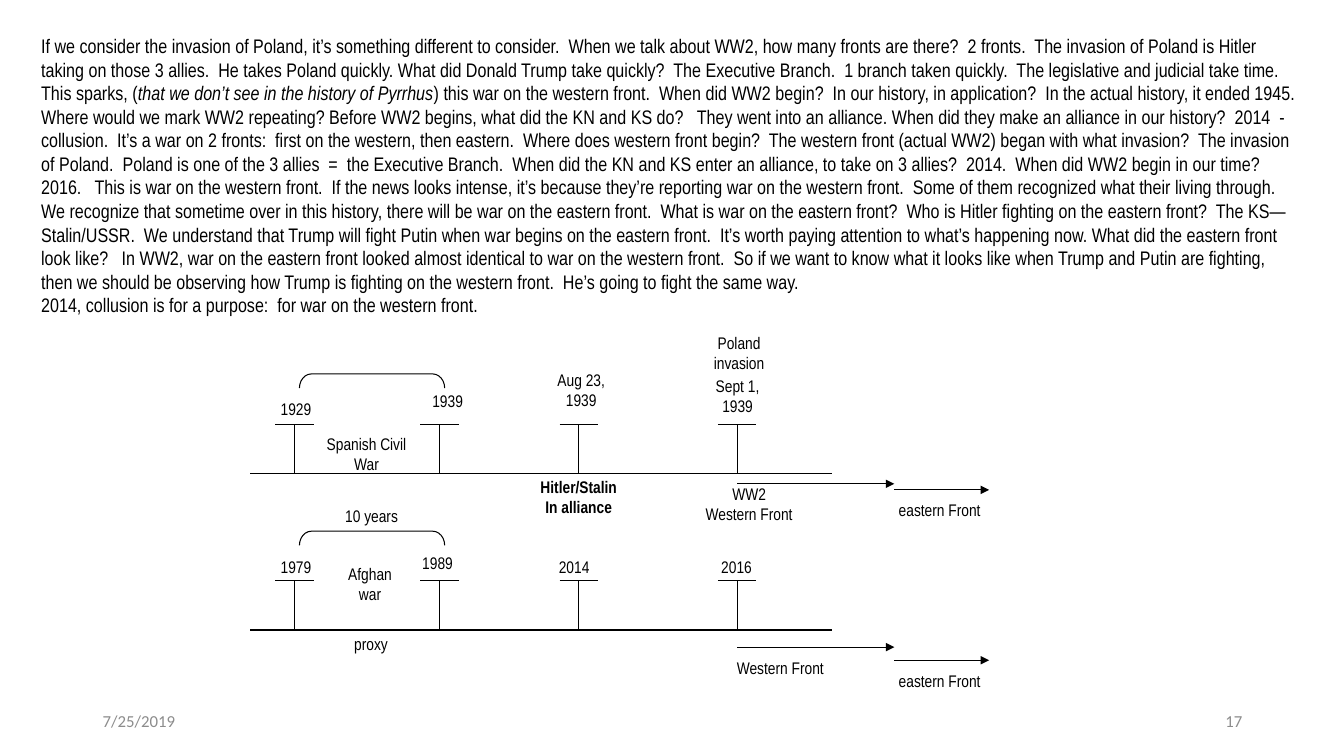
"""Build the slide comparing the 1929-1939 and 1979-2016 war timelines."""
from lxml import etree
from pptx import Presentation
from pptx.dml.color import RGBColor
from pptx.enum.shapes import MSO_CONNECTOR as Connector, MSO_SHAPE as Shape
from pptx.enum.text import MSO_ANCHOR as Anchor, PP_ALIGN as Align
from pptx.oxml.ns import qn
from pptx.util import Emu, Pt

PX = 9144
BLACK, GREY = "000000", "8C8C8C"
NARROW = "Arial Narrow"

BODY = [
    [
        ("If we consider the invasion of Poland, it’s something different to consider.  "
         "When we talk about WW2, how many fronts are there?  2 fronts.  "
         "The invasion of Poland is Hitler taking on those 3 allies.  He takes Poland quickly. "
         "What did Donald Trump take quickly?  The Executive Branch.  1 branch taken quickly.  "
         "The legislative and judicial take time.  This sparks, (", False),
        ("that we don’t see in the history of Pyrrhus", True),
        (") this war on the western front.  When did WW2 begin?  In our history, in application?  "
         "In the actual history, it ended 1945. Where would we mark WW2 repeating? "
         "Before WW2 begins, what did the KN and KS do?   They went into an alliance. "
         "When did they make an alliance in our history?  2014  -  collusion.  "
         "It’s a war on 2 fronts:  first on the western, then eastern.  ", False),
        ("Where does western front begin?  "
         "The western front (actual WW2) began with what invasion?  The invasion of Poland.  "
         "Poland is one of the 3 allies  =  the Executive Branch.  "
         "When did the KN and KS enter an alliance, to take on 3 allies?  2014.  "
         "When did WW2 begin in our time?  2016.   This is war on the western front.  "
         "If the news looks intense, it’s because they’re reporting war on the western front.  "
         "Some of them recognized what their living through.  ", False),
        ("We recognize that sometime over in this history, there will be war on the eastern front.  "
         "What is war on the eastern front?  Who is Hitler fighting on the eastern front?  "
         "The KS—Stalin/USSR.  "
         "We understand that Trump will fight Putin when war begins on the eastern front.  "
         "It’s worth paying attention to what’s happening now. ", False),
        ("What did the eastern front look like?   "
         "In WW2, war on the eastern front looked almost identical to war on the western front.  "
         "So if we want to know what it looks like when Trump and Putin are fighting, "
         "then we should be observing how Trump is fighting on the western front.  "
         "He’s going to fight the same way.", False),
    ],
    [("2014, collusion is for a purpose:  for war on the western front.", False)],
]

LABELS = [
    (["1929"], (273, 392, 41, 32)),
    (["1939"], (414, 384, 60, 32)),
    (["Aug 23,", "1939"], (541, 363, 71, 61)),
    (["Poland invasion"], (684, 326, 98, 36)),
    (["Sept 1, 1939"], (694, 369, 75, 55)),
    (["Spanish Civil War"], (306, 426, 115, 38)),
    (["WW2", "Western Front"], (694, 476, 98, 50)),
    (["eastern Front"], (883, 492, 98, 31)),
    (["10 years"], (334, 498, 69, 32)),
    (["1979"], (273, 548, 41, 32)),
    (["1989"], (404, 544, 60, 29)),
    (["2014"], (543, 548, 53, 32)),
    (["2016"], (693, 548, 75, 32)),
    (["Afghan", "war"], (323, 555, 88, 67)),
    (["proxy"], (318, 625, 100, 39)),
    (["Western Front"], (725, 648, 98, 25)),
    (["eastern Front"], (883, 661, 98, 31)),
]
ALLIANCE = (["Hitler/Stalin", "In alliance"], (524, 469, 100, 50))
FOOTERS = [("7/25/2019", 92, Align.LEFT), ("17", 942, Align.RIGHT)]

AXIS = (248, 825)
MARKS = (292, 436, 574, 731)
CAP, STEM = 19, 49
BRACKET_WIDTH, BRACKET_DEPTH, BRACKET_CENTER = 144, 14, 369
TIMELINES = [
    {"base": 470, "bracket": 378, "western": 480, "eastern": 486},
    {"base": 625, "bracket": 534, "western": 642, "eastern": 655},
]
FRONT_STOPS = (731, 887, 981)


def color(value):
    return RGBColor.from_string(value)


def px(*lengths):
    return [Emu(length * PX) for length in lengths]


def add_text(page, paragraphs, place, size, font=NARROW, ink=BLACK, align=Align.LEFT,
             anchor=Anchor.TOP, inset=None, bold=False):
    box = page.shapes.add_textbox(*px(*place))
    frame = box.text_frame
    frame.word_wrap = True
    frame.vertical_anchor = anchor
    if inset is not None:
        frame.margin_left, frame.margin_top, frame.margin_right, frame.margin_bottom = px(*[inset] * 4)
    for index, runs in enumerate(paragraphs):
        para = frame.add_paragraph() if index else frame.paragraphs[0]
        para.alignment = align
        for text, italic in runs:
            span = para.add_run()
            span.text = text
            span.font.name = font
            span.font.size = Pt(size)
            span.font.bold = bold
            span.font.italic = italic
            span.font.color.rgb = color(ink)


def add_label(page, lines, place, bold=False):
    add_text(page, [[(line, False)] for line in lines], place, 12,
             align=Align.CENTER, inset=4, bold=bold)


def add_line(page, start, end, arrow=False):
    line = page.shapes.add_connector(Connector.STRAIGHT, *px(*start, *end))
    line.line.color.rgb = color(BLACK)
    line.line.width = Pt(0.75)
    if arrow:
        outline = line._element.spPr.find(qn("a:ln"))
        etree.SubElement(outline, qn("a:tailEnd"), type="triangle")
    etree.SubElement(line._element.spPr, qn("a:effectLst"))


def add_bracket(page, center_y):
    left = BRACKET_CENTER - BRACKET_DEPTH // 2
    top = center_y - BRACKET_WIDTH // 2
    bracket = page.shapes.add_shape(Shape.LEFT_BRACKET, *px(left, top, BRACKET_DEPTH, BRACKET_WIDTH))
    bracket.rotation = 90
    bracket.adjustments[0] = 0.85
    bracket.shadow.inherit = False
    bracket.fill.background()
    bracket.line.color.rgb = color(BLACK)
    bracket.line.width = Pt(0.75)


def add_timeline(page, base, bracket, western, eastern):
    add_line(page, (AXIS[0], base), (AXIS[1], base))
    top = base - STEM
    for mark in MARKS:
        add_line(page, (mark, top), (mark, base))
        add_line(page, (mark - CAP, top), (mark + CAP, top))
    add_bracket(page, bracket)
    for start, end, height in zip(FRONT_STOPS, FRONT_STOPS[1:], (western, eastern)):
        add_line(page, (start, height), (end, height), arrow=True)


def main():
    deck = Presentation()
    deck.slide_width, deck.slide_height = px(1333, 750)
    page = deck.slides.add_slide(deck.slide_layouts[6])
    for text, left, align in FOOTERS:
        add_text(page, [[(text, False)]], (left, 695, 300, 40), 12, "Calibri", GREY, align, Anchor.MIDDLE)
    add_text(page, BODY, (31, 29, 1265, 320), 14)
    for timeline in TIMELINES:
        add_timeline(page, **timeline)
    for lines, place in LABELS:
        add_label(page, lines, place)
    add_label(page, *ALLIANCE, bold=True)
    deck.save("out.pptx")


if __name__ == "__main__":
    main()
